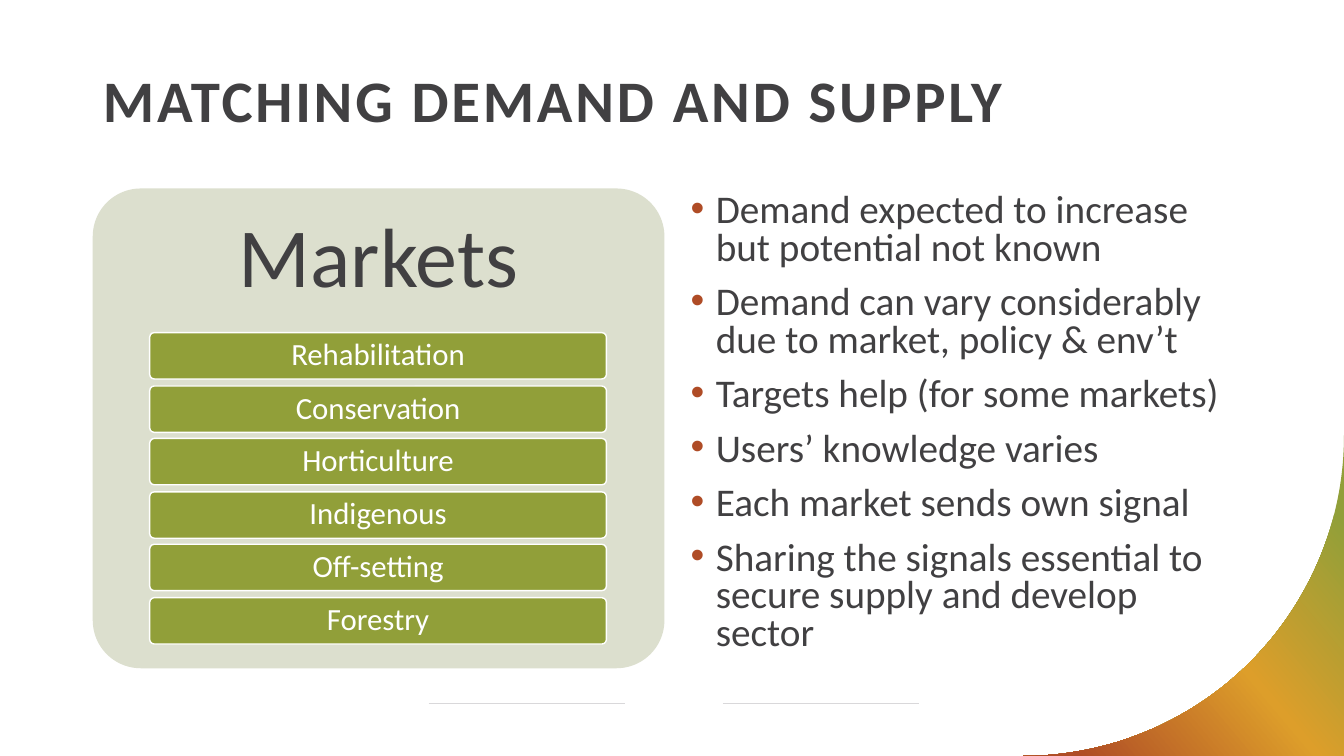
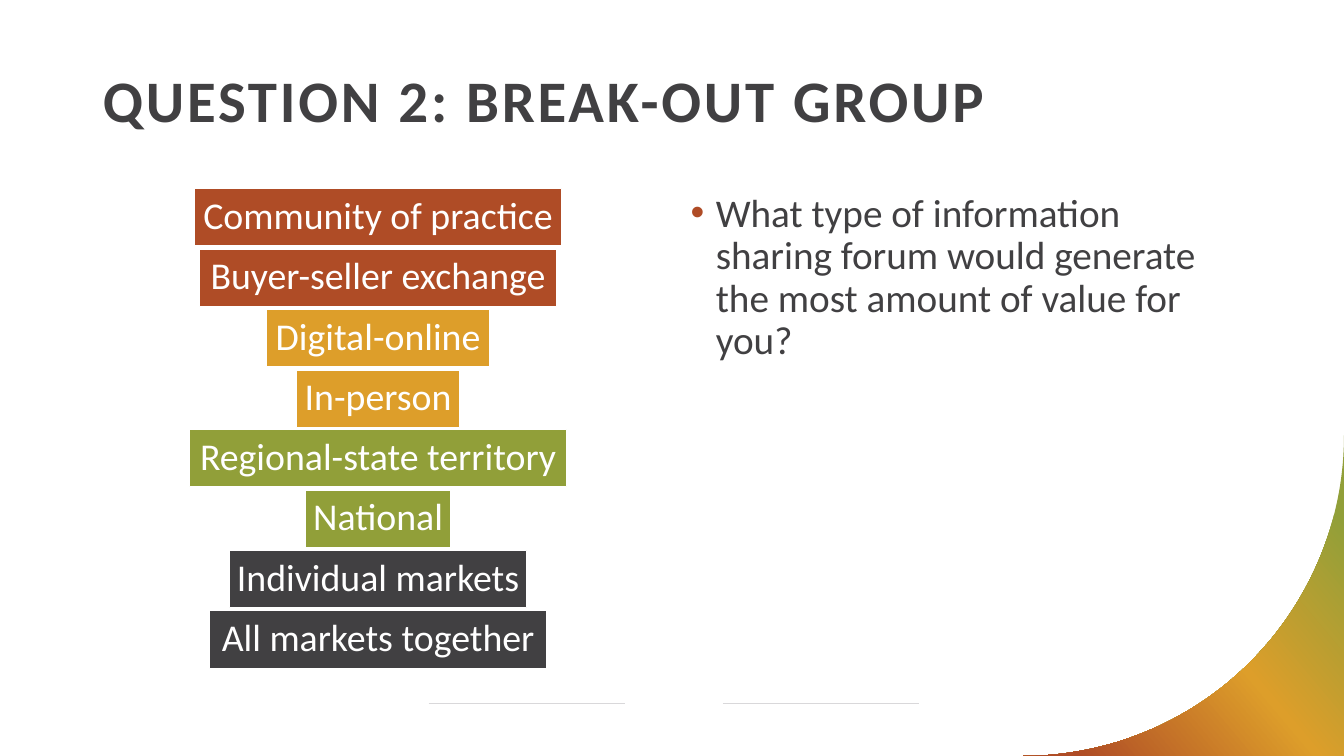
import copy
import math

import pptx
import pptx.dml.color
import pptx.enum.shapes
import pptx.enum.text
import pptx.oxml.ns
import pptx.oxml.xmlchemy
import pptx.util

PX = 9144  # EMU per px, 100 px to the inch
WIDTH, HEIGHT = 1333, 750
SHAPE = pptx.enum.shapes.MSO_SHAPE
ALIGN = pptx.enum.text.PP_ALIGN
ANCHOR = pptx.enum.text.MSO_ANCHOR
qn = pptx.oxml.ns.qn


def px(*lengths):
    return [pptx.util.Emu(round(n * PX)) for n in lengths]


def rgb(color):
    return pptx.dml.color.RGBColor.from_string(color)


def spread(first, last, count):
    """Return evenly spaced whole positions from first to last."""
    return [round(first + i * (last - first) / (count - 1)) for i in range(count)]


def sub(parent, tag, **attributes):
    element = pptx.oxml.xmlchemy.OxmlElement(tag)
    for name, value in attributes.items():
        element.set(name, value)
    parent.append(element)
    return element


class Deck:
    FONT = "Calibri"
    INK, RUST, AMBER, GREEN = "414042", "AF4C26", "DD9E2A", "919F39"
    PALE, RULE, WHITE = "DCDFCE", "D9D8DA", "FFFFFF"
    TOP, LEFT, COLUMN = 187, 92, 567
    BODY_HEIGHT = 476
    CENTER = 375

    def __init__(self):
        self.prs = pptx.Presentation()
        self.prs.slide_width, self.prs.slide_height = px(WIDTH, HEIGHT)
        self.s = None

    def slide(self, title):
        self.s = self.prs.slides.add_slide(self.prs.slide_layouts[1])
        for x in (425, 717):
            self.rule(x, 698, 195)
        self.corner(318)
        self.title(title)

    def rule(self, x, y, width):
        line = self.s.shapes.add_connector(
            pptx.enum.shapes.MSO_CONNECTOR.STRAIGHT, *px(x, y, x + width, y))
        line.line.color.rgb = rgb(self.RULE)
        line.line.width = pptx.util.Pt(0.5)
        sub(line._element.spPr, "a:effectLst")

    def corner(self, radius):
        """Fill the bottom right corner outside a quarter circle."""
        cx, cy = WIDTH - radius, HEIGHT - radius
        angles = [math.radians(a) for a in range(91)]
        arc = [px(cx + radius * math.cos(a), cy + radius * math.sin(a)) for a in angles]
        builder = self.s.shapes.build_freeform(*px(WIDTH, HEIGHT))
        builder.add_line_segments(arc)
        sp = builder.convert_to_shape()
        sp.shadow.inherit = False
        sp.line.fill.background()
        sp.fill.gradient()
        sp.fill.gradient_angle = 220
        stops = sp._element.spPr.find(".//" + qn("a:gsLst"))
        stops.append(copy.deepcopy(stops[0]))
        colors = ((0.12, self.GREEN), (0.5, self.AMBER), (0.91, self.RUST))
        for stop, (position, color) in zip(sp.fill.gradient_stops, colors):
            stop.position = position
            stop.color.rgb = rgb(color)

    def place(self, sp, x, y, width, height):
        sp.left, sp.top, sp.width, sp.height = px(x, y, width, height)
        tf = sp.text_frame
        tf.auto_size = pptx.enum.text.MSO_AUTO_SIZE.NONE
        tf.vertical_anchor = ANCHOR.TOP
        return tf

    def format(self, p, size, color, align=ALIGN.LEFT, spacing=0.9, bold=False):
        p.alignment = align
        p.line_spacing = spacing
        p.space_before = pptx.util.Pt(0)
        p.font.name = self.FONT
        p.font.size = pptx.util.Pt(size)
        p.font.bold = bold
        p.font.color.rgb = rgb(color)

    def title(self, text):
        tf = self.place(self.s.shapes.title, self.LEFT, 66, 1150, 102)
        tf.text = text
        p = tf.paragraphs[0]
        self.format(p, 42, self.INK, bold=True)
        p._p.pPr.find(qn("a:defRPr")).set("spc", "200")

    def bullets(self, items, spacing):
        tf = self.place(self.s.placeholders[1], 675, self.TOP, self.COLUMN, self.BODY_HEIGHT)
        tf.text = "\n".join(items)
        indent = px(25)[0]
        for p in tf.paragraphs:
            p.space_after = pptx.util.Pt(12)
            pPr = p._p.get_or_add_pPr()
            pPr.set("marL", str(indent))
            pPr.set("indent", str(-indent))
            sub(sub(pPr, "a:buClr"), "a:srgbClr", val=self.RUST)
            sub(pPr, "a:buChar", char="•")
            self.format(p, 28, self.INK, spacing=spacing)

    def text(self, sp, text, size, color):
        """Write one centred line in the middle of a shape."""
        tf = sp.text_frame
        tf.word_wrap = False
        tf.vertical_anchor = ANCHOR.MIDDLE
        tf.margin_left = tf.margin_right = tf.margin_top = tf.margin_bottom = px(5)[0]
        tf.text = text
        self.format(tf.paragraphs[0], size, color, ALIGN.CENTER)

    def box(self, kind, x, y, width, height, fill, outline=None):
        sp = self.s.shapes.add_shape(kind, *px(x, y, width, height))
        sp.shadow.inherit = False
        sp.fill.solid()
        sp.fill.fore_color.rgb = rgb(fill)
        if outline:
            sp.line.color.rgb = rgb(outline)
            sp.line.width = pptx.util.Pt(1)
        else:
            sp.line.fill.background()
        if kind == SHAPE.ROUNDED_RECTANGLE:
            sp.adjustments[0] = 0.1
        return sp

    def label(self, kind, text, y, width, height, fill, size):
        x = self.CENTER - width / 2
        sp = self.box(kind, x, y, width, height, fill, self.WHITE)
        self.text(sp, text, size, self.WHITE)

    def panel(self, heading, items):
        self.box(SHAPE.ROUNDED_RECTANGLE, self.LEFT, self.TOP,
                 self.COLUMN, self.BODY_HEIGHT, self.PALE)
        sp = self.s.shapes.add_textbox(*px(self.LEFT, self.TOP, self.COLUMN, 143))
        self.text(sp, heading, 60, self.INK)
        for item, y in zip(items, spread(330, 593, len(items))):
            self.label(SHAPE.ROUNDED_RECTANGLE, item, y, 453, 46, self.GREEN, 22)

    def stack(self, items):
        """Stack labels given as (text, width, fill)."""
        for (text, width, fill), y in zip(items, spread(self.TOP, 606, len(items))):
            self.label(SHAPE.RECTANGLE, text, y, width, 57, fill, 27)


def main():
    deck = Deck()

    deck.slide("MATCHING DEMAND AND SUPPLY")
    deck.panel("Markets", ["Rehabilitation", "Conservation", "Horticulture",
                           "Indigenous", "Off-setting", "Forestry"])
    deck.bullets([
        "Demand expected to increase but potential not known",
        "Demand can vary considerably due to market, policy & env’t",
        "Targets help (for some markets)",
        "Users’ knowledge varies",
        "Each market sends own signal",
        "Sharing the signals essential to secure supply and develop sector",
    ], spacing=0.8)

    deck.slide("QUESTION 2: BREAK-OUT GROUP")
    deck.bullets(["What type of information sharing forum would generate "
                  "the most amount of value for you?"], spacing=0.9)
    deck.stack([
        ("Community of practice", 364, deck.RUST),
        ("Buyer-seller exchange", 354, deck.RUST),
        ("Digital-online", 221, deck.AMBER),
        ("In-person", 162, deck.AMBER),
        ("Regional-state territory", 374, deck.GREEN),
        ("National", 145, deck.GREEN),
        ("Individual markets", 295, deck.INK),
        ("All markets together", 335, deck.INK),
    ])

    deck.prs.save("out.pptx")


if __name__ == "__main__":
    main()
